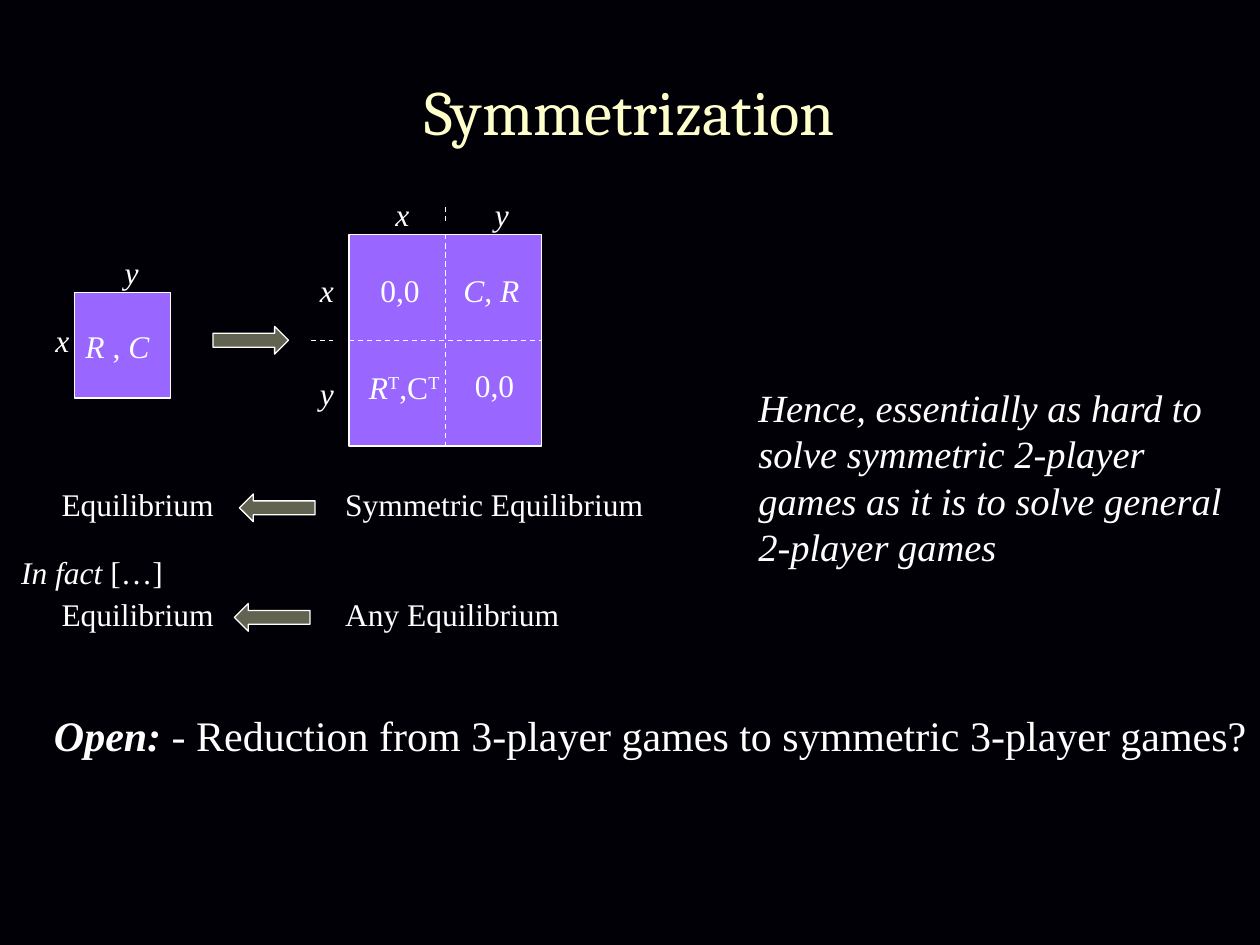
from lxml import etree
from pptx import Presentation, util as u
from pptx.dml.color import RGBColor
from pptx.enum import dml, shapes, text
from pptx.oxml.ns import qn

COLUMNS, ROWS = 100, 75
THEME = {
    "background": "000006", "title": "FFFFCC", "ink": "FFFFFF",
    "matrix": "9966FF", "arrow": "FFFFCC", "arrow_alpha": 39000,
    "heading_font": "Cambria", "body_font": "Times New Roman",
    "title_size": 36, "label_size": 18, "remark_size": 22, "open_size": 24,
    "rule": 0.75,
}

ITALIC = {"italic": True}
SUPER = {"baseline": "30000"}
TITLE = "Symmetrization"
REMARK = ("Hence, essentially as hard to solve symmetric 2-player games "
          "as it is to solve general 2-player games")
OPEN = [("Open:", {"bold": True, "italic": True}),
        (" - Reduction from 3-player games to symmetric 3-player games?", {})]
GAME = [("R", ITALIC), (" , ", {}), ("C", ITALIC)]
STRATEGIES = ["x", "y"]
PAYOFFS = [
    ([("0,0", {})], (29.2, 21, 5.2, 4)),
    ([("C, R", ITALIC)], (35.8, 21, 6.9, 4)),
    ([("R", ITALIC), ("T", SUPER), (",C", {}), ("T", SUPER)], (28.3, 28.7, 8.1, 4)),
    ([("0,0", {})], (36.7, 28.6, 5.2, 4)),
]
IN_FACT = [("In fact ", ITALIC), ("[…]", {})]
IMPLICATIONS = [
    ("Equilibrium", "Symmetric Equilibrium", 25.9, 19, 38),
    ("Equilibrium", "Any Equilibrium", 19.2, 18.6, 46.7),
]

CELL_W, CELL_H = 7.65, 8.4
GAME_LEFT, GAME_TOP = 5.9, 23.2
SYM_LEFT, SYM_TOP = 27.7, 18.6
SYM_MID_X, SYM_MID_Y = SYM_LEFT + CELL_W, SYM_TOP + CELL_H
LABEL_W, LABEL_H = 2.5, 7.1

deck = Presentation()
deck.slide_width, deck.slide_height = u.Inches(10), u.Inches(7.5)
slide = deck.slides.add_slide(deck.slide_layouts[6])


def place(*lengths):
    units = deck.slide_width / COLUMNS, deck.slide_height / ROWS
    return [round(n * units[i % 2]) for i, n in enumerate(lengths)]


def color(name):
    return RGBColor.from_string(THEME[name])


def write(content, at, size="label_size", font="body_font", ink="ink", wrap=False,
          align=text.PP_ALIGN.LEFT, anchor=text.MSO_ANCHOR.TOP, **style):
    frame = slide.shapes.add_textbox(*place(*at)).text_frame
    frame.word_wrap, frame.vertical_anchor = wrap, anchor
    paragraph = frame.paragraphs[0]
    paragraph.alignment = align
    for words, extra in [(content, {})] if isinstance(content, str) else content:
        look = {**style, **extra}
        run = paragraph.add_run()
        run.text = words
        run.font.name, run.font.size = THEME[font], u.Pt(THEME[size])
        run.font.color.rgb = color(ink)
        run.font.bold, run.font.italic = look.get("bold", False), look.get("italic", False)
        if "baseline" in look:
            run.font._element.set("baseline", look["baseline"])


def draw(kind, at, fill):
    part = slide.shapes.add_shape(kind, *place(*at))
    part.shadow.inherit = False
    part.fill.solid()
    part.fill.fore_color.rgb = color(fill)
    part.line.color.rgb = color("ink")
    part.line.width = u.Pt(THEME["rule"])
    return part


def matrix(left, top, cells):
    return draw(shapes.MSO_SHAPE.RECTANGLE, (left, top, cells * CELL_W, cells * CELL_H), "matrix")


def arrow(left, top, rotation=0):
    pointer = draw(shapes.MSO_SHAPE.RIGHT_ARROW, (left, top, 6, 2.2), "arrow")
    pointer.rotation = rotation
    tint = pointer._element.spPr.find(qn("a:solidFill"))[0]
    etree.SubElement(tint, qn("a:alpha")).set("val", str(THEME["arrow_alpha"]))


def dashed(*ends):
    divider = slide.shapes.add_connector(shapes.MSO_CONNECTOR.STRAIGHT, *place(*ends))
    divider.line.color.rgb = color("ink")
    divider.line.width = u.Pt(THEME["rule"])
    divider.line.dash_style = dml.MSO_LINE.DASH
    etree.SubElement(divider._element.spPr, qn("a:effectLst"))
    return divider


def strategy(name, left, top):
    write(name, (left, top, LABEL_W, LABEL_H), wrap=True, italic=True)


slide.background.fill.solid()
slide.background.fill.fore_color.rgb = color("background")
write(TITLE, (3.3, 2.5, 93.4, 12.5), size="title_size", font="heading_font", ink="title",
      wrap=True, align=text.PP_ALIGN.CENTER, anchor=text.MSO_ANCHOR.MIDDLE)

matrix(GAME_LEFT, GAME_TOP, 1)
write(GAME, (5.8, 25.5, 8.1, 4), wrap=True)
strategy(STRATEGIES[0], GAME_LEFT - LABEL_W, 25)
strategy(STRATEGIES[1], 8.9, 19.6)
arrow(16.9, 25.9)

symmetric = matrix(SYM_LEFT, SYM_TOP, 2)
sides = [
    ((SYM_MID_X, SYM_TOP, SYM_MID_X, SYM_TOP + 2 * CELL_H), 0, 2),
    ((SYM_LEFT, SYM_MID_Y, SYM_LEFT + 2 * CELL_W, SYM_MID_Y), 1, 3),
]
for ends, first, last in sides:
    split = dashed(*ends)
    split.begin_connect(symmetric, first)
    split.end_connect(symmetric, last)
dashed(SYM_MID_X, 16.4, SYM_MID_X, 17.7)
dashed(24.7, SYM_MID_Y, 26.4, SYM_MID_Y)
for index, name in enumerate(STRATEGIES):
    strategy(name, 30.4 + 7.9 * index, 15)
    strategy(name, 24.4, 21 + 8.2 * index)
for payoff, at in PAYOFFS:
    write(payoff, at)

for result, premise, premise_width, arrow_left, row in IMPLICATIONS:
    write(result, (3.9, row, 14.2, 4))
    arrow(arrow_left, row + 1.2, 180)
    write(premise, (26.4, row, premise_width, 4))
write(IN_FACT, (0.7, 43.4, 13.6, 4))

write(REMARK, (59.2, 30, 40.8, 15.8), size="remark_size", wrap=True, italic=True)
write(OPEN, (3.3, 55.8, 96.7, 5), size="open_size")

deck.save("out.pptx")
